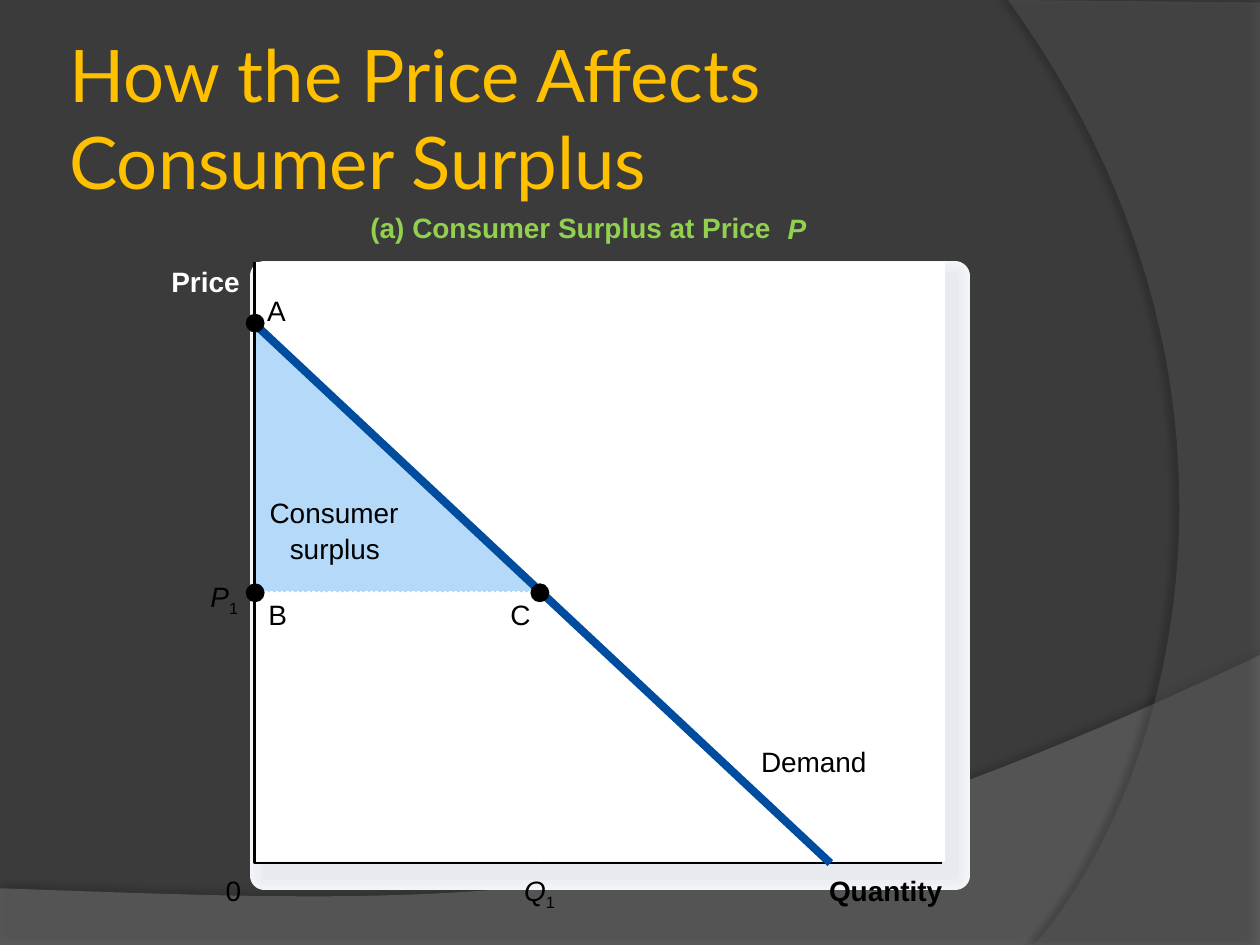
import pptx
import pptx.util
import pptx.dml.color
import pptx.enum.dml
import pptx.enum.shapes
import pptx.enum.text
import pptx.oxml
import pptx.oxml.ns

RGBColor = pptx.dml.color.RGBColor
BACKDROP = RGBColor(0x3B, 0x3B, 0x3B)
LOWER_WAVE = RGBColor(0x7F, 0x7F, 0x7F)
RIGHT_WAVE = RGBColor(0x5E, 0x5E, 0x5E)
GOLD = RGBColor(0xFF, 0xC0, 0x00)
GREEN = RGBColor(0x92, 0xD0, 0x50)
WHITE = RGBColor(0xFF, 0xFF, 0xFF)
BLACK = RGBColor(0x00, 0x00, 0x00)
SURPLUS_BLUE = RGBColor(0xB4, 0xD9, 0xF9)
DEMAND_BLUE = RGBColor(0x00, 0x4C, 0x9F)
PANEL_EDGES = [
    (RGBColor(0xF3, 0xF6, 0xF9), 16.75),
    (RGBColor(0xF2, 0xF4, 0xF8), 15.25),
    (RGBColor(0xF1, 0xF4, 0xF7), 13.75),
    (RGBColor(0xF0, 0xF2, 0xF5), 12.25),
    (RGBColor(0xEE, 0xF1, 0xF4), 10.63),
    (RGBColor(0xED, 0xEF, 0xF3), 9.13),
    (RGBColor(0xE9, 0xEB, 0xF0), 4.63),
    (RGBColor(0xE7, 0xEA, 0xEF), 3),
]

COLUMNS, ROWS = 100, 75
LEFT, TOP, BOTTOM, RIGHT = 20.2, 20.8, 68.5, 74.8
POINT_A = (LEFT, 25.6)
POINT_B = (LEFT, 47)
POINT_C = (42.8, 47)
DOT_SIZE = 1.5


def grid(units):
    return pptx.util.Inches(units / 10)


def add_effects(shape, content=""):
    shape._element.spPr.append(pptx.oxml.parse_xml(
        f"<a:effectLst {pptx.oxml.ns.nsdecls('a')}>{content}</a:effectLst>"))


def paint(shape, fill=None, line=None, weight=1):
    if fill is None:
        shape.fill.background()
    else:
        shape.fill.solid()
        shape.fill.fore_color.rgb = fill
    if line is None:
        shape.line.fill.background()
    else:
        shape.line.color.rgb = line
        shape.line.width = pptx.util.Pt(weight)


def add_outline(page, points, closed=True, shadow=""):
    start, *others = [(grid(x), grid(y)) for x, y in points]
    builder = page.shapes.build_freeform(*start)
    builder.add_line_segments(others, close=closed)
    outline = builder.convert_to_shape()
    paint(outline)
    add_effects(outline, shadow)
    return outline


def curve(start, first, second, end, steps=48):
    points = []
    for step in range(steps + 1):
        t = step / steps
        weights = ((1 - t) ** 3, 3 * t * (1 - t) ** 2, 3 * t * t * (1 - t), t ** 3)
        points.append(tuple(
            sum(weight * value for weight, value in zip(weights, values))
            for values in zip(start, first, second, end)))
    return points


def add_wave(page, points, color, opacity, shade, distance, direction):
    wave = add_outline(
        page, points,
        shadow=f"<a:outerShdw blurRad='{pptx.util.Pt(4)}' dist='{pptx.util.Pt(distance)}' "
        f"dir='{direction * 60000}' algn='ctr' rotWithShape='0'>"
        f"<a:srgbClr val='000000'><a:alpha val='{shade * 1000}'/></a:srgbClr>"
        "</a:outerShdw>")
    paint(wave, fill=color)
    color_node = wave._element.spPr.find(
        pptx.oxml.ns.qn("a:solidFill") + "/" + pptx.oxml.ns.qn("a:srgbClr"))
    color_node.append(pptx.oxml.parse_xml(
        f"<a:alpha {pptx.oxml.ns.nsdecls('a')} val='{opacity * 1000}'/>"))


def add_preset(page, kind, left, top, width, height, **style):
    shape = page.shapes.add_shape(kind, *map(grid, (left, top, width, height)))
    shape.shadow.inherit = False
    paint(shape, **style)


def add_label(page, text, left, top, width, height=3.2, color=BLACK,
              bold=False, italic=False, subscript=""):
    box = page.shapes.add_textbox(*map(grid, (left, top, width, height)))
    frame = box.text_frame
    frame.word_wrap = False
    frame.margin_left = frame.margin_right = 0
    frame.margin_top = frame.margin_bottom = 0
    para = frame.paragraphs[0]
    para.font.name = "Arial"
    para.font.size = pptx.util.Pt(16)
    para.font.bold = bold
    para.font.color.rgb = color
    span = para.add_run()
    span.text = text
    span.font.italic = italic
    if subscript:
        lowered = para.add_run()
        lowered.text = subscript
        lowered.font._element.set("baseline", "-25000")


def add_title(page, text):
    box = page.shapes.add_textbox(grid(5), grid(3), grid(81.7), grid(12.5))
    frame = box.text_frame
    frame.word_wrap = True
    frame.vertical_anchor = pptx.enum.text.MSO_ANCHOR.MIDDLE
    frame.margin_left = frame.margin_right = grid(0.5)
    frame.margin_top = frame.margin_bottom = grid(0.5)
    para = frame.paragraphs[0]
    para.text = text
    para.font.name = "Lato"
    para.font.size = pptx.util.Pt(41.4)
    para.font.color.rgb = GOLD


def add_waves(page):
    lower = [(0, ROWS), (COLUMNS, ROWS)] + curve(
        (COLUMNS, 52), (55.9, 72.9), (39.1, 71.9), (0, 70.5))
    add_wave(page, lower, LOWER_WAVE, 45, 35, 3.5, 270)
    right = [(COLUMNS, 0.2), (COLUMNS, ROWS)] + curve(
        (82.1, ROWS), (93.5, 61.9), (101.8, 30), (80, 0))
    add_wave(page, right, RIGHT_WAVE, 40, 45, 4, 180)


def add_panel(page):
    rectangle = pptx.enum.shapes.MSO_SHAPE.RECTANGLE
    for color, weight in PANEL_EDGES:
        add_preset(page, rectangle, 21, 21.9, 54.8, 47.6,
                   fill=color, line=color, weight=weight)
    add_preset(page, rectangle, LEFT, TOP, 54.8, 47.6, fill=WHITE)


def add_demand(page):
    demand = page.shapes.add_connector(
        pptx.enum.shapes.MSO_CONNECTOR.STRAIGHT,
        *map(grid, (LEFT, 25.7, 65.9, BOTTOM)))
    demand.line.color.rgb = DEMAND_BLUE
    demand.line.width = pptx.util.Pt(4.63)
    add_effects(demand)
    add_label(page, "Demand", 60.4, 59.1, 9.6)


def add_point(page, name, center, left, top):
    add_label(page, name, left, top, 2.6)
    x, y = center
    add_preset(page, pptx.enum.shapes.MSO_SHAPE.OVAL,
               x - DOT_SIZE / 2 + 0.05, y - DOT_SIZE / 2 + 0.05,
               DOT_SIZE, DOT_SIZE, fill=BLACK)


def main():
    deck = pptx.Presentation()
    deck.slide_width, deck.slide_height = grid(COLUMNS), grid(ROWS)
    page = deck.slides.add_slide(deck.slide_layouts[6])
    page.background.fill.solid()
    page.background.fill.fore_color.rgb = BACKDROP

    add_waves(page)
    add_title(page, "How the Price Affects Consumer Surplus")
    add_panel(page)
    paint(add_outline(page, [POINT_A, POINT_B, POINT_C]), fill=SURPLUS_BLUE)
    add_label(page, "Consumer", 21.4, 39.3, 11.6)
    add_label(page, "surplus", 23, 42.2, 8.5)
    axes = add_outline(page, [(LEFT, TOP), (LEFT, BOTTOM), (RIGHT, BOTTOM)], closed=False)
    paint(axes, line=BLACK, weight=1.5)

    add_label(page, "Quantity", 65.8, 69.3, 10.5, bold=True)
    add_label(page, "(a) Consumer Surplus at Price", 29.4, 16.7, 32.8, 2.7, GREEN, bold=True)
    add_label(page, "P", 62.5, 16.8, 1.5, 2.7, GREEN, bold=True, italic=True)
    add_label(page, "Price", 13.6, 21, 5.5, 2.7, WHITE, bold=True)
    add_label(page, "0", 17.9, 69.3, 2.3)

    add_demand(page)
    guide = add_outline(page, [POINT_B, POINT_C, (POINT_C[0], BOTTOM)], closed=False)
    paint(guide, line=WHITE, weight=1.5)
    guide.line.dash_style = pptx.enum.dml.MSO_LINE.ROUND_DOT
    add_label(page, "P", 16.7, 46, 2.3, 2.7, italic=True, subscript="1")
    add_label(page, "Q", 41.6, 69.3, 2.6, 2.7, italic=True, subscript="1")

    add_point(page, "B", POINT_B, 21.3, 47.4)
    add_point(page, "A", POINT_A, 21.2, 23.3)
    add_point(page, "C", POINT_C, 40.5, 47.4)
    deck.save("out.pptx")


if __name__ == "__main__":
    main()
